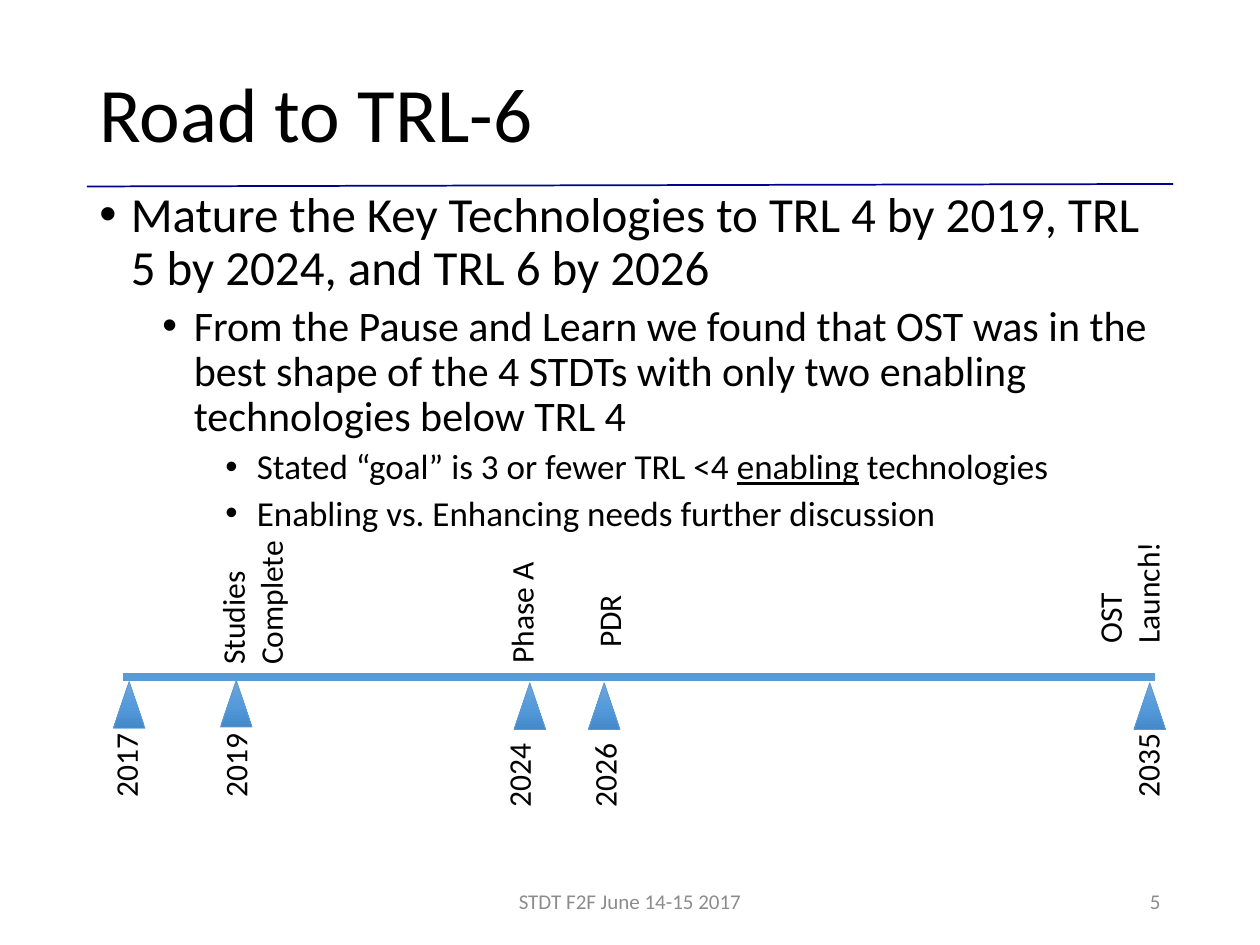
from copy import deepcopy

from lxml import etree
from pptx import Presentation
from pptx.dml.color import RGBColor
from pptx.enum.shapes import MSO_CONNECTOR, MSO_SHAPE
from pptx.enum.text import MSO_ANCHOR, MSO_AUTO_SIZE, PP_ALIGN
from pptx.oxml.ns import qn
from pptx.util import Emu, Pt

PX = 9144
FONT = "Calibri"
STRAIGHT = MSO_CONNECTOR.STRAIGHT
TRIANGLE = MSO_SHAPE.ISOSCELES_TRIANGLE
TOP, MIDDLE = MSO_ANCHOR.TOP, MSO_ANCHOR.MIDDLE
LEFT, CENTER, RIGHT = PP_ALIGN.LEFT, PP_ALIGN.CENTER, PP_ALIGN.RIGHT
FIT_SHAPE, FIXED = MSO_AUTO_SIZE.SHAPE_TO_FIT_TEXT, MSO_AUTO_SIZE.NONE

COLORS = {
    "text": "000000",
    "footer": "8C8C8C",
    "rule": "000090",
    "axis": "5B9BD5",
    "marker_top": "71A6DB",
    "marker_middle": "559BDB",
    "marker_bottom": "448ACA",
}

BULLETS = [
    (0, 28, ["Mature the Key Technologies to TRL 4 by 2019, TRL 5 by 2024, and TRL 6 by 2026"]),
    (1, 24, ["From the Pause and Learn we found that OST was in the best shape of the 4 STDTs "
             "with only two enabling technologies below TRL 4"]),
    (2, 20, ["Stated “goal” is 3 or fewer TRL <4 ", "enabling", " technologies"]),
    (2, 20, ["Enabling vs. Enhancing needs further discussion"]),
]
UNDERLINED = {"enabling"}

MARKERS = [(0, 107), (85, 106), (318, 108), (377, 108), (810, 108)]
YEARS = [
    ("2017", (-26, 153, 71, 40), False),
    ("2019", (61, 153, 71, 40), False),
    ("2024", (285, 160, 73, 40), True),
    ("2026", (354, 161, 71, 40), False),
    ("2035", (785, 153, 71, 40), False),
]
MILESTONES = [
    (["Studies", "Complete"], (50, 8, 120, 71)),
    (["OST", "Launch!"], (755, 0, 102, 71)),
    (["Phase A"], (273, 32, 101, 40)),
    (["PDR"], (362, 39, 62, 40)),
]


def px(length):
    return Emu(length * PX)


def rgb(name):
    return RGBColor.from_string(COLORS[name])


def add_bullet(paragraph, level):
    properties = paragraph._p.get_or_add_pPr()
    properties.set("marL", str(px(25 + 50 * level)))
    properties.set("indent", str(px(-25)))
    etree.SubElement(properties, qn("a:buFont"), typeface="Arial")
    etree.SubElement(properties, qn("a:buChar"), char="•")


def add_text(slide, box, paragraphs, size=18, color="text", align=LEFT, anchor=TOP,
             wrap=True, fit=FIXED, rotation=0, line_spacing=1.0, bullets=False):
    holder = slide.shapes.add_textbox(*map(px, box))
    holder.rotation = rotation
    frame = holder.text_frame
    frame.word_wrap = wrap
    frame.auto_size = fit
    frame.vertical_anchor = anchor
    for index, content in enumerate(paragraphs):
        level, points, runs = content if bullets else (0, size, [content])
        paragraph = frame.paragraphs[0] if index == 0 else frame.add_paragraph()
        if bullets:
            paragraph.level = level
            add_bullet(paragraph, level)
            if index:
                paragraph.space_before = Pt(5)
        paragraph.alignment = align
        paragraph.line_spacing = line_spacing
        for wording in runs:
            run = paragraph.add_run()
            run.text = wording
            run.font.name = FONT
            run.font.size = Pt(points)
            run.font.color.rgb = rgb(color)
            if wording in UNDERLINED:
                run.font.underline = True


def add_line(slide, start, end, color, width):
    line = slide.shapes.add_connector(STRAIGHT, *map(px, start + end))
    line.line.color.rgb = rgb(color)
    line.line.width = Pt(width)
    etree.SubElement(line._element.spPr, qn("a:effectLst"))


def add_marker(slide, box):
    marker = slide.shapes.add_shape(TRIANGLE, *map(px, box))
    marker.shadow.inherit = False
    marker.line.color.rgb = rgb("axis")
    marker.line.width = Pt(0.5)
    marker.fill.gradient()
    marker.fill.gradient_angle = 270
    stops = marker._element.spPr.find(qn("a:gradFill")).find(qn("a:gsLst"))
    stops.insert(1, deepcopy(stops[0]))
    shades = [(0, "marker_top"), (0.5, "marker_middle"), (1, "marker_bottom")]
    for stop, (position, shade) in zip(marker.fill.gradient_stops, shades):
        stop.position = position
        stop.color.rgb = rgb(shade)


def add_header(slide, left, top, width, height):
    add_line(slide, (left, top + height + 2), (left + width, top + height), "rule", 1)
    add_text(slide, (left, top, width, height), ["Road to TRL-6"], size=44,
             anchor=MIDDLE, line_spacing=0.9)


def add_body(slide, left, top, width, height):
    add_text(slide, (left, top, width, height), BULLETS, line_spacing=0.9, bullets=True)


def add_footer(slide, left, top, width, height):
    style = {"size": 12, "color": "footer", "anchor": MIDDLE}
    add_text(slide, (left, top, 338, height), ["STDT F2F June 14-15 2017"],
             align=CENTER, **style)
    add_text(slide, (left + width - 225, top, 225, height), ["5"], align=RIGHT, **style)


def add_timeline(slide, left, top, width):
    def place(x, y, *extent):
        return (left + x, top + y, *extent)

    add_line(slide, place(8, 103), place(width - 8, 103), "axis", 4.5)
    for x, y in MARKERS:
        add_marker(slide, place(x, y, 25, 37))
    for year, box, wrap in YEARS:
        add_text(slide, place(*box), [year], wrap=wrap, fit=FIT_SHAPE, rotation=270)
    for lines, box in MILESTONES:
        add_text(slide, place(*box), lines, wrap=False, fit=FIT_SHAPE, rotation=270)


def main():
    deck = Presentation()
    deck.slide_width, deck.slide_height = px(1000), px(750)
    slide = deck.slides.add_slide(deck.slide_layouts[6])
    add_header(slide, 69, 40, 862, 106)
    add_body(slide, 69, 146, 863, 552)
    add_footer(slide, 331, 695, 600, 40)
    add_timeline(slide, 90, 434, 835)
    deck.save("out.pptx")


if __name__ == "__main__":
    main()
